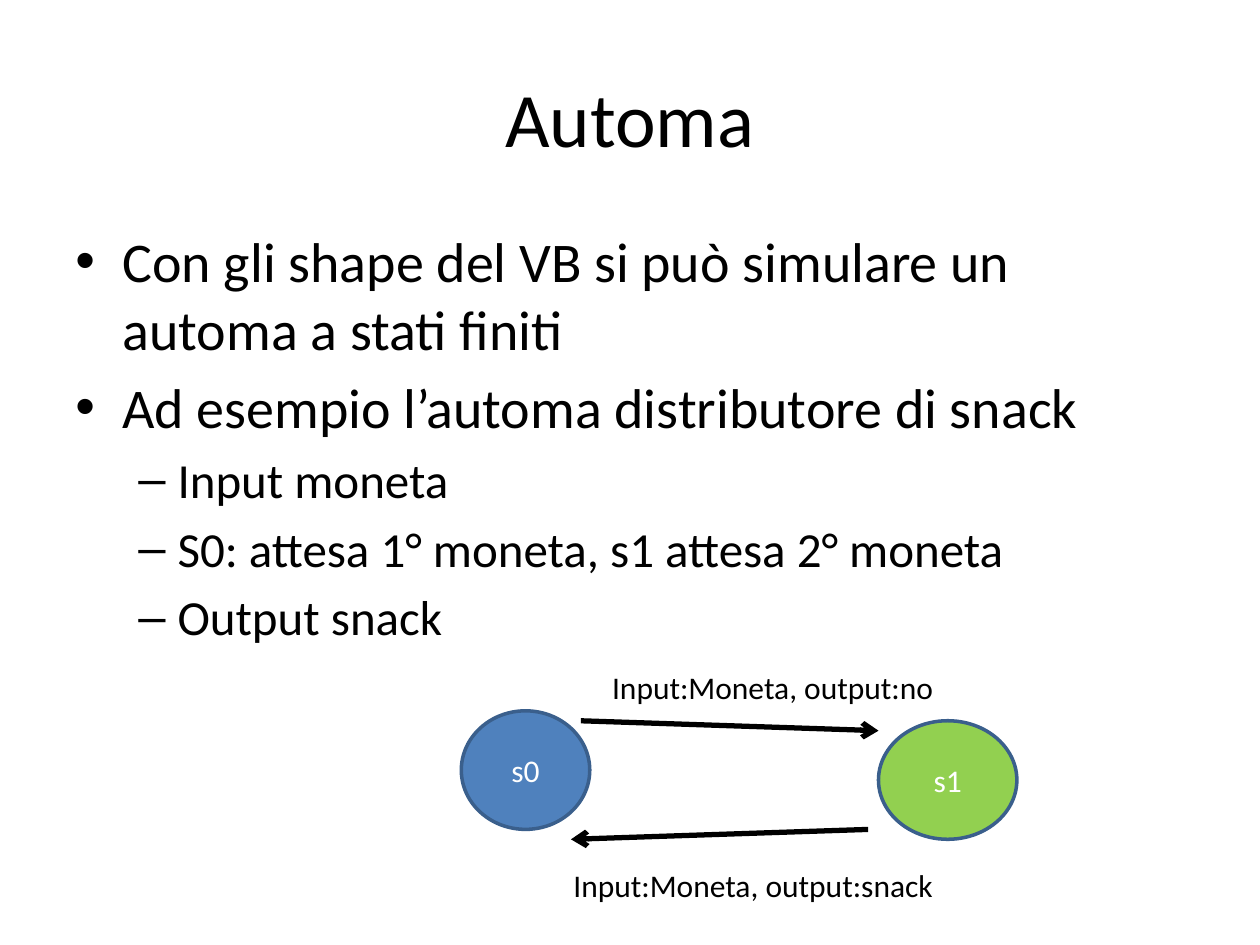
from dataclasses import dataclass

from lxml import etree
from pptx import Presentation
from pptx.dml.color import RGBColor
from pptx.enum import shapes, text
from pptx.oxml import ns
from pptx.util import Cm, Pt


@dataclass(frozen=True)
class Theme:
    font: str = "Calibri"
    ink: str = "000000"
    light: str = "FFFFFF"
    blue: str = "4F81BD"
    green: str = "92D050"
    outline: str = "3A5F8C"
    title: int = 44
    levels: tuple = (32, 28)
    label: int = 18


THEME = Theme()
# Bullet, left margin and hanging indent (cm) for each outline level
BULLETS = (("•", 0.95, 0.95), ("–", 2.06, 0.79))
POINTS = (
    (0, "Con gli shape del VB si può simulare un automa a stati finiti"),
    (0, "Ad esempio l’automa distributore di snack"),
    (1, "Input moneta"),
    (1, "S0: attesa 1° moneta, s1 attesa 2° moneta"),
    (1, "Output snack"),
)


def rgb(value):
    return RGBColor.from_string(value)


def style(para, size, colour=THEME.ink):
    for span in para.runs:
        span.font.name = THEME.font
        span.font.size = Pt(size)
        span.font.color.rgb = rgb(colour)


def add_text(page, left, top, width, height, wrap=True):
    box = page.shapes.add_textbox(Cm(left), Cm(top), Cm(width), Cm(height))
    box.text_frame.word_wrap = wrap
    return box.text_frame


def add_title(page, left, top, width, height):
    frame = add_text(page, left, top, width, height)
    frame.vertical_anchor = text.MSO_ANCHOR.MIDDLE
    frame.text = "Automa"
    para = frame.paragraphs[0]
    para.alignment = text.PP_ALIGN.CENTER
    style(para, THEME.title)


def set_bullet(para, level):
    mark, margin, hanging = BULLETS[level]
    props = para._p.get_or_add_pPr()
    props.set("marL", str(Cm(margin)))
    props.set("indent", str(-Cm(hanging)))
    font = etree.SubElement(props, ns.qn("a:buFont"))
    font.set("typeface", "Arial")
    etree.SubElement(props, ns.qn("a:buChar")).set("char", mark)


def add_points(page, left, top, width, height):
    frame = add_text(page, left, top, width, height)
    for index, (level, wording) in enumerate(POINTS):
        para = frame.add_paragraph() if index else frame.paragraphs[0]
        para.text = wording
        para.level = level
        set_bullet(para, level)
        size = THEME.levels[level]
        para.space_before = Pt(0.2 * size if index else 0)
        style(para, size)


def add_state(page, name, fill, left, top, width, height):
    state = page.shapes.add_shape(
        shapes.MSO_SHAPE.OVAL, Cm(left), Cm(top), Cm(width), Cm(height))
    state.shadow.inherit = False
    state.fill.solid()
    state.fill.fore_color.rgb = rgb(fill)
    state.line.color.rgb = rgb(THEME.outline)
    state.line.width = Pt(2)
    state.text_frame.text = name
    state.text_frame.vertical_anchor = text.MSO_ANCHOR.MIDDLE
    para = state.text_frame.paragraphs[0]
    para.alignment = text.PP_ALIGN.CENTER
    style(para, THEME.label, THEME.light)


def add_arrow(page, x1, y1, x2, y2):
    arrow = page.shapes.add_connector(
        shapes.MSO_CONNECTOR.STRAIGHT, Cm(x1), Cm(y1), Cm(x2), Cm(y2))
    arrow.line.color.rgb = rgb(THEME.ink)
    arrow.line.width = Pt(3)
    head = etree.SubElement(arrow.line._get_or_add_ln(), ns.qn("a:tailEnd"))
    head.set("type", "arrow")
    etree.SubElement(arrow._element.spPr, ns.qn("a:effectLst"))


def add_label(page, wording, left, top, width):
    frame = add_text(page, left, top, width, 1.02, wrap=False)
    frame.auto_size = text.MSO_AUTO_SIZE.SHAPE_TO_FIT_TEXT
    frame.text = wording
    style(frame.paragraphs[0], THEME.label)


def add_automaton(page, left, top):
    """Two states joined by labelled transitions, from the given corner."""
    add_state(page, "s0", THEME.blue, left, top + 0.99, 2.59, 2.39)
    add_state(page, "s1", THEME.green, left + 8.41, top + 1.19, 2.79, 2.39)
    add_arrow(page, left + 2.41, top + 1.19, left + 8.41, top + 1.39)
    add_arrow(page, left + 8.2, top + 3.38, left + 2.21, top + 3.58)
    add_label(page, "Input:Moneta, output:no", left + 2.79, top, 7.06)
    add_label(page, "Input:Moneta, output:snack", left + 2.01, top + 3.99, 7.85)


def main():
    deck = Presentation()
    deck.slide_width, deck.slide_height = Cm(25.4), Cm(19.05)
    page = deck.slides.add_slide(deck.slide_layouts[6])
    add_title(page, 1.27, 0.76, 22.86, 3.18)
    add_points(page, 1.27, 4.45, 22.86, 12.57)
    add_automaton(page, 9.3, 13.34)
    deck.save("out.pptx")


if __name__ == "__main__":
    main()
